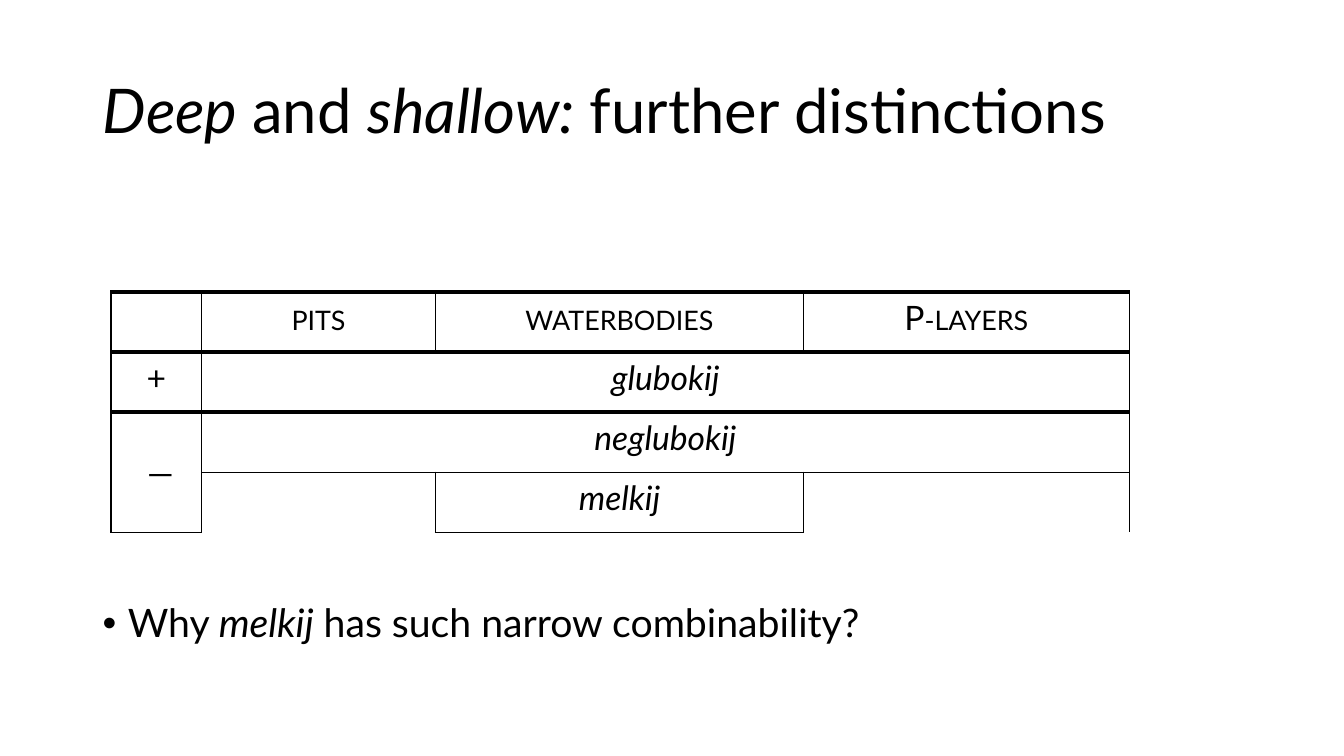
from lxml.etree import SubElement
from pptx import Presentation
from pptx.dml.color import RGBColor
from pptx.enum.text import MSO_ANCHOR as Anchor, PP_ALIGN as Align
from pptx.oxml.ns import qn
from pptx.util import Inches, Pt


def color(value):
    return RGBColor.from_string(value)


def write(frame, runs, *, size, font, ink, align=Align.LEFT, caps=False, line=None):
    paragraph = frame.paragraphs[0]
    paragraph.alignment = align
    if line:
        paragraph.line_spacing = line
    for text, italic in runs:
        run = paragraph.add_run()
        run.text = text
        run.font.name = font
        run.font.size = Pt(size)
        run.font.italic = italic
        run.font.color.rgb = color(ink)
        if caps:
            run.font._element.set("cap", "small")
    return paragraph


class SlideBuilder:
    font = "Lato"
    ink = "000000"

    def __init__(self, slide):
        self.slide = slide

    def text(self, box, runs, size, bullet=False):
        shape = self.slide.shapes.add_textbox(*map(Inches, box))
        frame = shape.text_frame
        frame.word_wrap = True
        frame.vertical_anchor = Anchor.MIDDLE
        paragraph = write(frame, runs, size=size, font=self.font, ink=self.ink, line=0.9)
        if bullet:
            properties = paragraph._p.get_or_add_pPr()
            properties.set("marL", str(Inches(0.25)))
            properties.set("indent", str(Inches(-0.25)))
            SubElement(properties, qn("a:buFont"), typeface="Arial")
            SubElement(properties, qn("a:buChar"), char="•")

    def table(self, box, widths, row_count):
        shape = self.slide.shapes.add_table(row_count, len(widths), *map(Inches, box))
        table = shape.table
        table.first_row = False
        table.horz_banding = False
        for column, width in zip(table.columns, widths):
            column.width = Inches(width)
        return table

    def cell(self, cell, text, italic=False, caps=False, anchor=Anchor.TOP):
        cell.vertical_anchor = anchor
        write(cell.text_frame, [(text, italic)], size=24, font=self.font, ink=self.ink,
              align=Align.CENTER, caps=caps)

    def borders(self, cell, top, bottom):
        properties = cell._tc.get_or_add_tcPr()
        for side, width in (("L", 1), ("R", 1), ("T", top), ("B", bottom)):
            border = SubElement(properties, qn(f"a:ln{side}"), w=str(Pt(width)))
            if width:
                fill = SubElement(border, qn("a:solidFill"))
                SubElement(fill, qn("a:srgbClr"), val=self.ink)
            else:
                SubElement(border, qn("a:noFill"))
        cell.fill.background()


def main():
    presentation = Presentation()
    presentation.slide_width = Inches(13.33)
    presentation.slide_height = Inches(7.5)
    builder = SlideBuilder(presentation.slides.add_slide(presentation.slide_layouts[6]))

    builder.text((0.92, 0.4, 11.5, 1.45),
                 [("Deep ", True), ("and ", False), ("shallow: ", True),
                  ("further distinctions", False)], 44)

    row_borders = [(3, 3), (3, 3), (3, 1), (1, 0)]
    table = builder.table((1.1, 2.9, 10.1, 2.38), (0.9, 2.32, 3.65, 3.23), len(row_borders))
    for row, (top, bottom) in enumerate(row_borders):
        for column in range(len(table.columns)):
            closed = row == 3 and column in (0, 2)
            builder.borders(table.cell(row, column), top, 1 if closed else bottom)
    for row in (1, 2):
        table.cell(row, 1).merge(table.cell(row, 3))
    table.cell(2, 0).merge(table.cell(3, 0))

    for column, heading in enumerate(("pits", "waterbodies", "P-layers"), 1):
        builder.cell(table.cell(0, column), heading, caps=True)
    builder.cell(table.cell(1, 0), "+")
    builder.cell(table.cell(2, 0), " —", anchor=Anchor.MIDDLE)
    for row, column, adjective in ((1, 1, "glubokij"), (2, 1, "neglubokij"), (3, 2, "melkij")):
        builder.cell(table.cell(row, column), adjective, italic=True)

    builder.text((0.92, 5.9, 11.5, 0.6),
                 [("Why ", False), ("melkij", True),
                  (" has such narrow combinability?", False)], 28, bullet=True)

    presentation.save("out.pptx")


if __name__ == "__main__":
    main()
